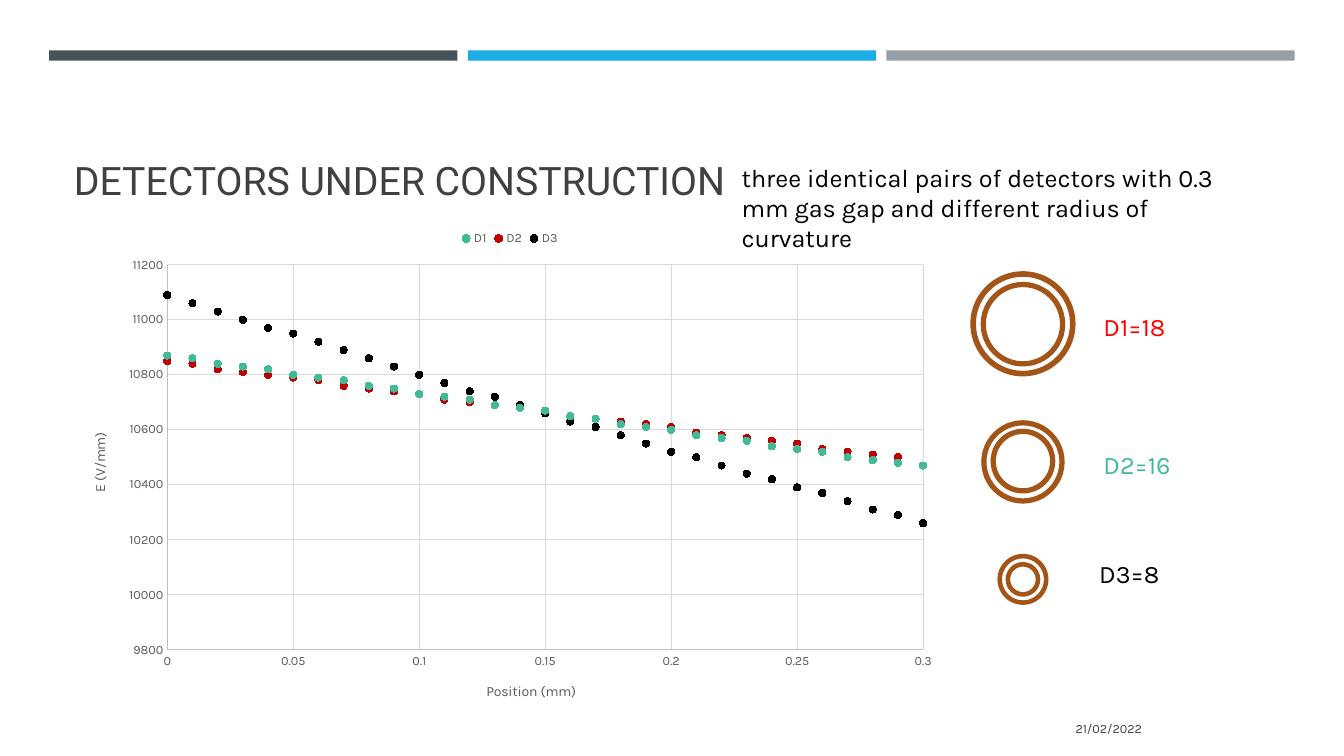
"""Builds the slide on cylindrical detectors with their field chart."""
from math import log

from lxml import etree
from pptx import Presentation
from pptx.chart.data import XyChartData
from pptx.dml.color import RGBColor
from pptx.enum.chart import XL_CHART_TYPE, XL_LEGEND_POSITION, XL_MARKER_STYLE, XL_TICK_MARK
from pptx.enum.shapes import MSO_SHAPE
from pptx.enum.text import MSO_ANCHOR, MSO_AUTO_SIZE, PP_ALIGN
from pptx.oxml import parse_xml
from pptx.oxml.ns import nsdecls, qn
from pptx.util import Cm, Pt

SCATTER = XL_CHART_TYPE.XY_SCATTER
LEGEND_TOP = XL_LEGEND_POSITION.TOP
CIRCLE = XL_MARKER_STYLE.CIRCLE
NO_TICK = XL_TICK_MARK.NONE
RECTANGLE, OVAL = MSO_SHAPE.RECTANGLE, MSO_SHAPE.OVAL
TOP, MIDDLE, BOTTOM = MSO_ANCHOR.TOP, MSO_ANCHOR.MIDDLE, MSO_ANCHOR.BOTTOM
LEFT, RIGHT = PP_ALIGN.LEFT, PP_ALIGN.RIGHT
NO_AUTOFIT = MSO_AUTO_SIZE.NONE
VOLTAGE, GAP, STEPS = 3200, 0.3, 30


def style_font(font, size, color, name="Karla"):
    font.size, font.name, font.bold = Pt(size), name, False
    font.color.rgb = RGBColor.from_string(color)


def set_layout(parent, before, **fractions):
    for old in parent.findall(qn("c:layout")):
        parent.remove(old)
    layout = parse_xml(f"<c:layout {nsdecls('c')}><c:manualLayout/></c:layout>")
    settings = {"xMode": "edge", "yMode": "edge", **fractions}
    if "w" in fractions:
        settings = {"layoutTarget": "inner", **settings}
    for tag, value in settings.items():
        etree.SubElement(layout[0], qn(f"c:{tag}")).set("val", str(value))
    parent.insert(before, layout)


presentation = Presentation()
presentation.slide_width, presentation.slide_height = Cm(33.87), Cm(19.05)
slide = presentation.slides.add_slide(presentation.slide_layouts[5])
shapes = slide.shapes

for index, color in enumerate(["465359", "1CADE4", "969FA7"]):
    bar = shapes.add_shape(RECTANGLE, Cm(1.24 + 10.55 * index), Cm(1.27), Cm(10.29), Cm(0.26))
    bar.shadow.inherit = False
    bar.fill.solid()
    bar.fill.fore_color.rgb = RGBColor.from_string(color)
    bar.line.fill.background()

title = shapes.title
title.left, title.top, title.width, title.height = Cm(1.61), Cm(1.96), Cm(30.63), Cm(3.3)
title.text_frame.text = "DETECTORS UNDER CONSTRUCTION"
title.text_frame.vertical_anchor = BOTTOM
title.text_frame.auto_size = NO_AUTOFIT
title.text_frame.paragraphs[0].alignment = LEFT
style_font(title.text_frame.paragraphs[0].font, 28, "404040", "Roboto")

chart_data = XyChartData()
for name, radius in [("D1", 8), ("D2", 9), ("D3", 4)]:
    series_data = chart_data.add_series(name)
    inner_radius = radius - GAP
    for step in range(STEPS + 1):
        position = round(GAP * step / STEPS, 2)
        field = VOLTAGE / ((inner_radius + position) * log(radius / inner_radius))
        if name == "D2" and step == STEPS:
            field = 10470
        series_data.add_data_point(position, int(round(field, -1)))

frame = shapes.add_chart(SCATTER, Cm(1.78), Cm(5.54), Cm(22.15), Cm(12.6), chart_data)
chart = frame.chart
style_font(chart.font, 10, "000000")
chart.has_title = False
chart.has_legend = True
chart.legend.position = LEGEND_TOP
chart.legend.include_in_layout = False
style_font(chart.legend.font, 9, "595959")
plot = chart.plots[0]
plot.vary_by_categories = False
for series, color in zip(plot.series, ["42BA97", "C00000", "000000"]):
    series.format.line.fill.background()
    series.marker.style, series.marker.size = CIRCLE, 5
    series.marker.format.fill.solid()
    series.marker.format.fill.fore_color.rgb = RGBColor.from_string(color)
    series.marker.format.line.color.rgb = RGBColor.from_string(color)

axes = [
    (chart.category_axis, "Position (mm)", 0, 0.3, 0.05, "General", 0.47, 0.92),
    (chart.value_axis, "E (V/mm)", 9800, 11200, 200, "0", 0.02, 0.42),
]
for axis, text, low, high, unit, number_format, x, y in axes:
    axis.minimum_scale, axis.maximum_scale, axis.major_unit = low, high, unit
    axis.major_tick_mark = axis.minor_tick_mark = NO_TICK
    axis.tick_labels.number_format = number_format
    axis.tick_labels.number_format_is_linked = False
    style_font(axis.tick_labels.font, 9, "595959")
    axis.has_major_gridlines = True
    for line, color in [(axis.format.line, "BFBFBF"), (axis.major_gridlines.format.line, "D9D9D9")]:
        line.width = Pt(0.75)
        line.color.rgb = RGBColor.from_string(color)
    axis.axis_title.text_frame.text = text
    style_font(axis.axis_title.text_frame.paragraphs[0].font, 10, "595959")
    set_layout(axis.axis_title._element, 1, x=x, y=y)
plot_area = chart._chartSpace.find(qn("c:chart")).find(qn("c:plotArea"))
set_layout(plot_area, 0, x=0.11, y=0.09, w=0.86, h=0.77)

rings = [
    (8.16, 2.51, 4), (8.17, 2, 3.75),
    (11.64, 1.97, 3.75), (11.62, 1.5, 3.75),
    (14.6, 1.17, 3.25), (14.6, 0.76, 3.25),
]
for center, diameter, width in rings:
    ring = shapes.add_shape(OVAL, Cm(25.78 - diameter / 2), Cm(center - diameter / 2),
                            Cm(diameter), Cm(diameter))
    ring.shadow.inherit = False
    ring.fill.background()
    ring.line.color.rgb = RGBColor.from_string("A25516")
    ring.line.width = Pt(width)

statement = ("three identical pairs of detectors with 0.3 mm gas gap "
             "and different radius of curvature")
texts = [
    ("D1=18", 27.56, 7.72, 2.41, 1.02, 18, "FF0000", LEFT, TOP, 0.13),
    ("D2=16", 27.56, 11.2, 2.41, 1.02, 18, "42BA97", LEFT, TOP, 0.13),
    ("D3=8", 27.45, 13.94, 2.06, 1.02, 18, "000000", LEFT, TOP, 0.13),
    (statement, 18.44, 3.2, 13.26, 2.57, 18, "000000", LEFT, TOP, 0.89),
    ("21/02/2022", 21.13, 17.84, 7.9, 1.02, 9, "404040", RIGHT, MIDDLE, 0.13),
]
for text, left, top, width, height, size, color, alignment, anchor, margin in texts:
    box = shapes.add_textbox(Cm(left), Cm(top), Cm(width), Cm(height))
    box.text_frame.word_wrap = True
    box.text_frame.vertical_anchor = anchor
    box.text_frame.margin_top = Cm(margin)
    box.text_frame.text = text
    paragraph = box.text_frame.paragraphs[0]
    paragraph.alignment = alignment
    style_font(paragraph.font, size, color)

presentation.save("out.pptx")
